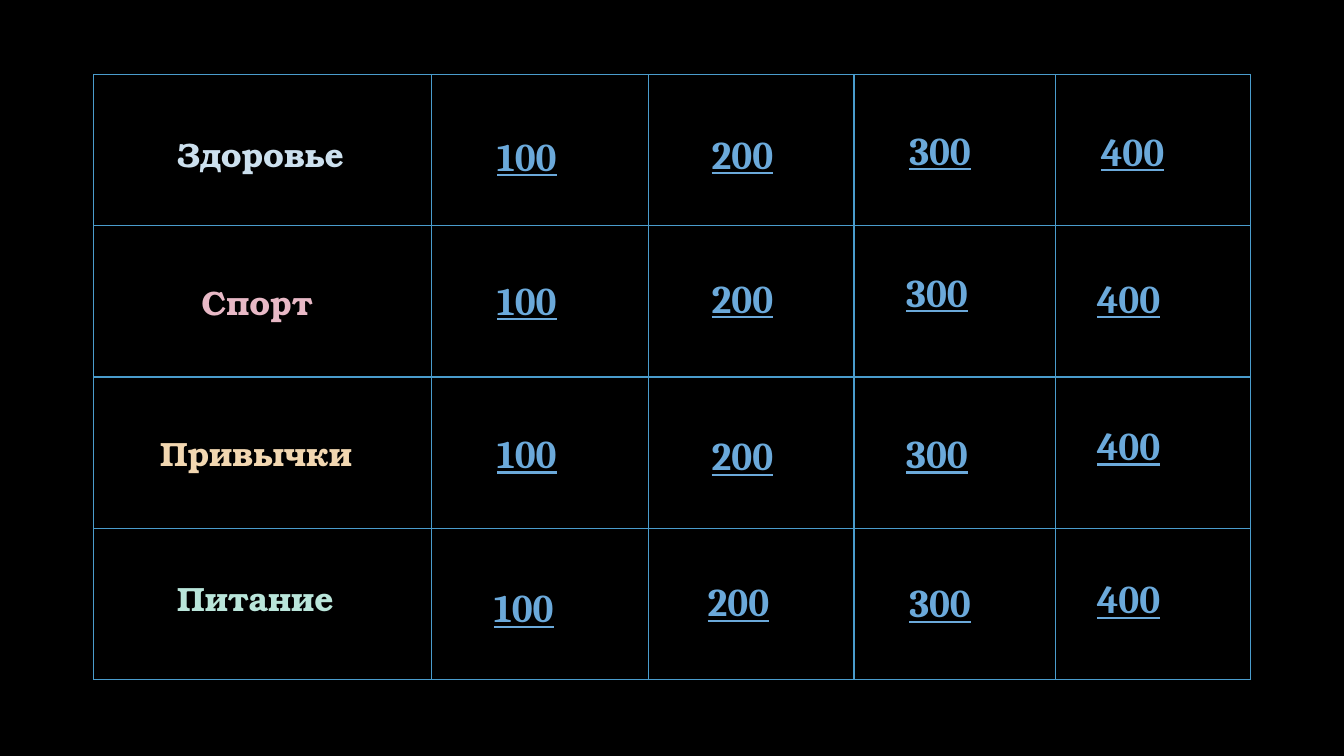
"""Build a quiz board slide with four topics and four prices each."""
from dataclasses import dataclass

from lxml import etree
from pptx import Presentation
from pptx.dml.color import RGBColor
from pptx.enum.text import MSO_AUTO_SIZE
from pptx.oxml.ns import qn
from pptx.util import Emu, Pt

GROW = MSO_AUTO_SIZE.SHAPE_TO_FIT_TEXT
BLANK = 6
SCALE = 9144


@dataclass(frozen=True)
class Theme:
    """Hold the colours, fonts and type sizes of the board."""
    back: str = "000000"
    line: str = "4A9CCC"
    price: str = "6BA9DA"
    health: str = "CCE0EE"
    sport: str = "E8B9C6"
    habit: str = "F2D7B1"
    food: str = "B9E5DA"
    topic_font: str = "TeX Gyre Bonum"
    price_font: str = "Cambria"
    topic_size: int = 24
    price_size: int = 28
    line_width: int = 1


THEME = Theme()
BOARD = (93, 74)
COLUMNS = (335, 215, 204, 200, 193)
ROWS = (150,) * 4
TOPICS = (
    ("Здоровье", THEME.health, 166, 128),
    ("Спорт", THEME.sport, 190, 275),
    ("Привычки", THEME.habit, 149, 425),
    ("Питание", THEME.food, 166, 568),
)
PRICES = {
    "100": ((483, 126), (483, 269), (483, 421), (480, 574)),
    "200": ((696, 124), (696, 267), (696, 423), (692, 568)),
    "300": ((892, 120), (889, 261), (889, 421), (892, 569)),
    "400": ((1082, 121), (1078, 267), (1078, 413), (1078, 565)),
}


def px(count):
    """Turn pixels into EMU."""
    return Emu(count * SCALE)


def add_border(cell):
    """Draw a thin line on each side of a cell."""
    props = cell._tc.get_or_add_tcPr()
    for side in ("a:lnL", "a:lnR", "a:lnT", "a:lnB"):
        line = etree.SubElement(props, qn(side), w=str(Pt(THEME.line_width)))
        fill = etree.SubElement(line, qn("a:solidFill"))
        etree.SubElement(fill, qn("a:srgbClr"), val=THEME.line)


def add_board(slide):
    """Add the empty table behind the words."""
    left, top = BOARD
    frame = slide.shapes.add_table(
        len(ROWS), len(COLUMNS), px(left), px(top), px(sum(COLUMNS)), px(sum(ROWS)))
    table = frame.table
    table.first_row = False
    table.horz_banding = False
    for column, width in zip(table.columns, COLUMNS):
        column.width = px(width)
    for row, height in zip(table.rows, ROWS):
        row.height = px(height)
    for cell in table.iter_cells():
        add_border(cell)
        cell.fill.background()


def add_label(slide, text, box, face, size, colour):
    """Add a bold label and return its font."""
    frame = slide.shapes.add_textbox(*map(px, box)).text_frame
    frame.word_wrap = True
    frame.auto_size = GROW
    frame.text = text
    font = frame.paragraphs[0].runs[0].font
    font.name = face
    font.size = Pt(size)
    font.bold = True
    font.color.rgb = RGBColor.from_string(colour)
    return font


def add_topic(slide, text, colour, left, top):
    """Add the name of a row."""
    add_label(slide, text, (left, top, 234, 50),
              THEME.topic_font, THEME.topic_size, colour)


def add_price(slide, text, left, top):
    """Add an underlined price."""
    font = add_label(slide, text, (left, top, 106, 57),
                     THEME.price_font, THEME.price_size, THEME.price)
    font.underline = True


def main():
    """Build and save the slide."""
    deck = Presentation()
    deck.slide_width = px(1333)
    deck.slide_height = px(750)
    slide = deck.slides.add_slide(deck.slide_layouts[BLANK])
    fill = slide.background.fill
    fill.solid()
    fill.fore_color.rgb = RGBColor.from_string(THEME.back)
    add_board(slide)
    for topic in TOPICS:
        add_topic(slide, *topic)
    for text, places in PRICES.items():
        for left, top in places:
            add_price(slide, text, left, top)
    deck.save("out.pptx")


if __name__ == "__main__":
    main()
